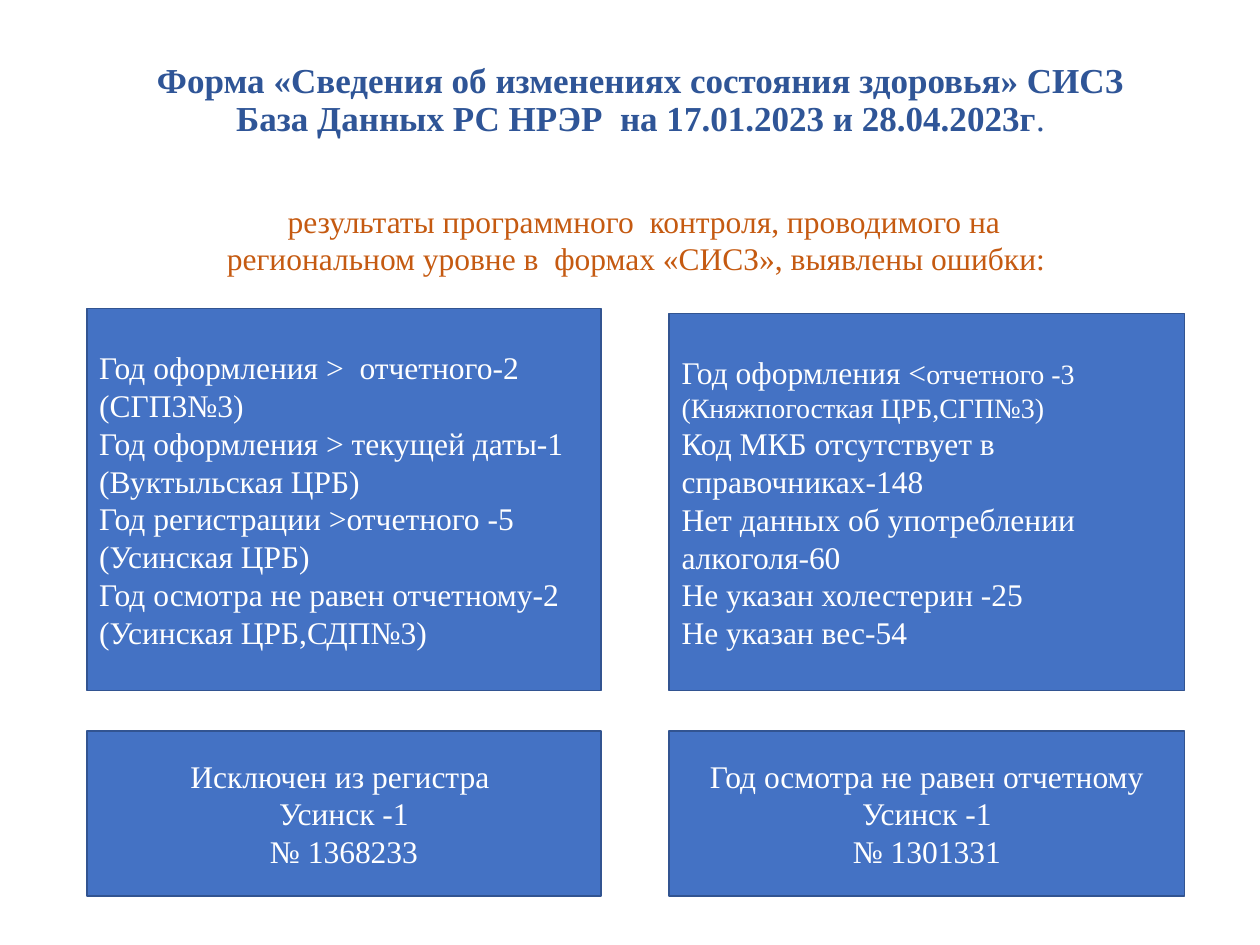
"""Build the slide on errors found in the health-change forms."""
from dataclasses import dataclass

from lxml import etree
from pptx import Presentation
from pptx import util as u
from pptx.dml.color import RGBColor
from pptx.enum import shapes, text

FONT = "Times New Roman"
COLORS = {
    "title": "2F5597",
    "subtitle": "C55A11",
    "panel": "4472C4",
    "border": "325491",
    "panel_text": "FFFFFF",
}
LEFT_X, RIGHT_X = 1.75, 13.49
LEFT_WIDTH, RIGHT_WIDTH = 10.37, 10.39
PANEL_BOTTOM = 13.92
SUMMARY_TOP, SUMMARY_HEIGHT = 14.73, 3.33


@dataclass
class Panel:
    """A filled rectangle, in centimetres, with one paragraph per line."""
    left: float
    top: float
    width: float
    height: float
    lines: list[str]
    centered: bool = False


PANELS = [
    Panel(RIGHT_X, 6.32, RIGHT_WIDTH, PANEL_BOTTOM - 6.32, [
        "Год оформления <",
        "Код МКБ отсутствует в справочниках-148",
        "Нет данных об употреблении алкоголя-60",
        "Не указан холестерин -25",
        "Не указан вес-54",
    ]),
    Panel(LEFT_X, 6.22, LEFT_WIDTH, PANEL_BOTTOM - 6.22, [
        "Год оформления >  отчетного-2 (СГП3№3)",
        "Год оформления > текущей даты-1 (Вуктыльская ЦРБ)",
        "Год регистрации >отчетного -5",
        "(Усинская ЦРБ)",
        "Год осмотра не равен отчетному-2",
        "(Усинская ЦРБ,СДП№3)",
    ]),
    Panel(LEFT_X, SUMMARY_TOP, LEFT_WIDTH, SUMMARY_HEIGHT,
          ["Исключен из регистра ", "Усинск -1", "№ 1368233"], True),
    Panel(RIGHT_X, SUMMARY_TOP, RIGHT_WIDTH, SUMMARY_HEIGHT,
          ["Год осмотра не равен отчетному", "Усинск -1", "№ 1301331"], True),
]


def color(name: str) -> RGBColor:
    """Look up a named colour."""
    return RGBColor.from_string(COLORS[name])


def format_span(span, size: float, color_name: str, bold: bool = False) -> None:
    """Set the font of one run."""
    span.font.name = FONT
    span.font.size = u.Pt(size)
    span.font.bold = bold
    span.font.color.rgb = color(color_name)


def format_frame(frame, size: float, color_name: str, centered: bool, bold: bool = False) -> None:
    """Align every paragraph and set the font of every run."""
    frame.word_wrap = True
    for para in frame.paragraphs:
        para.alignment = text.PP_ALIGN.CENTER if centered else text.PP_ALIGN.LEFT
        for span in para.runs:
            format_span(span, size, color_name, bold)


def draw_title(page) -> None:
    """Place and fill the title placeholder."""
    title = page.shapes.title
    title.left, title.top, title.width, title.height = map(u.Cm, (1.75, 1.02, 22.15, 2.92))
    frame = title.text_frame
    frame.auto_size = text.MSO_AUTO_SIZE.NONE
    frame.vertical_anchor = text.MSO_ANCHOR.TOP
    frame.margin_top = u.Cm(0.25)
    para = frame.paragraphs[0]
    para.text = (" Форма «Сведения об изменениях состояния здоровья» СИСЗ\v"
                 " База Данных РС НРЭР  на 17.01.2023 и 28.04.2023г")
    para.line_spacing = 0.9
    format_frame(frame, 20, "title", True, bold=True)
    period = para.add_run()
    period.text = "."
    format_span(period, 20, "title")


def draw_subtitle(page) -> None:
    """Add the line that introduces the errors."""
    box = page.shapes.add_textbox(u.Cm(3.71), u.Cm(3.94), u.Cm(18.39), u.Cm(1.8))
    box.text_frame.text = (" результаты программного  контроля, проводимого на региональном "
                           "уровне в  формах «СИСЗ», выявлены ошибки: ")
    format_frame(box.text_frame, 18, "subtitle", True)


def draw_panel(page, panel: Panel):
    """Draw one panel and return its shape."""
    box = page.shapes.add_shape(
        shapes.MSO_SHAPE.RECTANGLE,
        *map(u.Cm, (panel.left, panel.top, panel.width, panel.height)))
    box.shadow.inherit = False
    box.fill.solid()
    box.fill.fore_color.rgb = color("panel")
    box.line.color.rgb = color("border")
    box.line.width = u.Pt(1)
    box.text_frame.vertical_anchor = text.MSO_ANCHOR.MIDDLE
    box.text_frame.text = "\n".join(panel.lines)
    format_frame(box.text_frame, 18, "panel_text", panel.centered)
    return box


def main() -> None:
    """Build and save the deck."""
    deck = Presentation()
    deck.slide_width, deck.slide_height = u.Cm(25.4), u.Cm(19.05)
    page = deck.slides.add_slide(deck.slide_layouts[5])
    draw_title(page)
    boxes = [draw_panel(page, panel) for panel in PANELS]
    detail = boxes[0].text_frame.paragraphs[0].add_run()
    detail.text = "отчетного -3 (Княжпогосткая ЦРБ,СГП№3)"
    format_span(detail, 16, "panel_text")
    draw_subtitle(page)
    deck.save("out.pptx")


if __name__ == "__main__":
    main()
